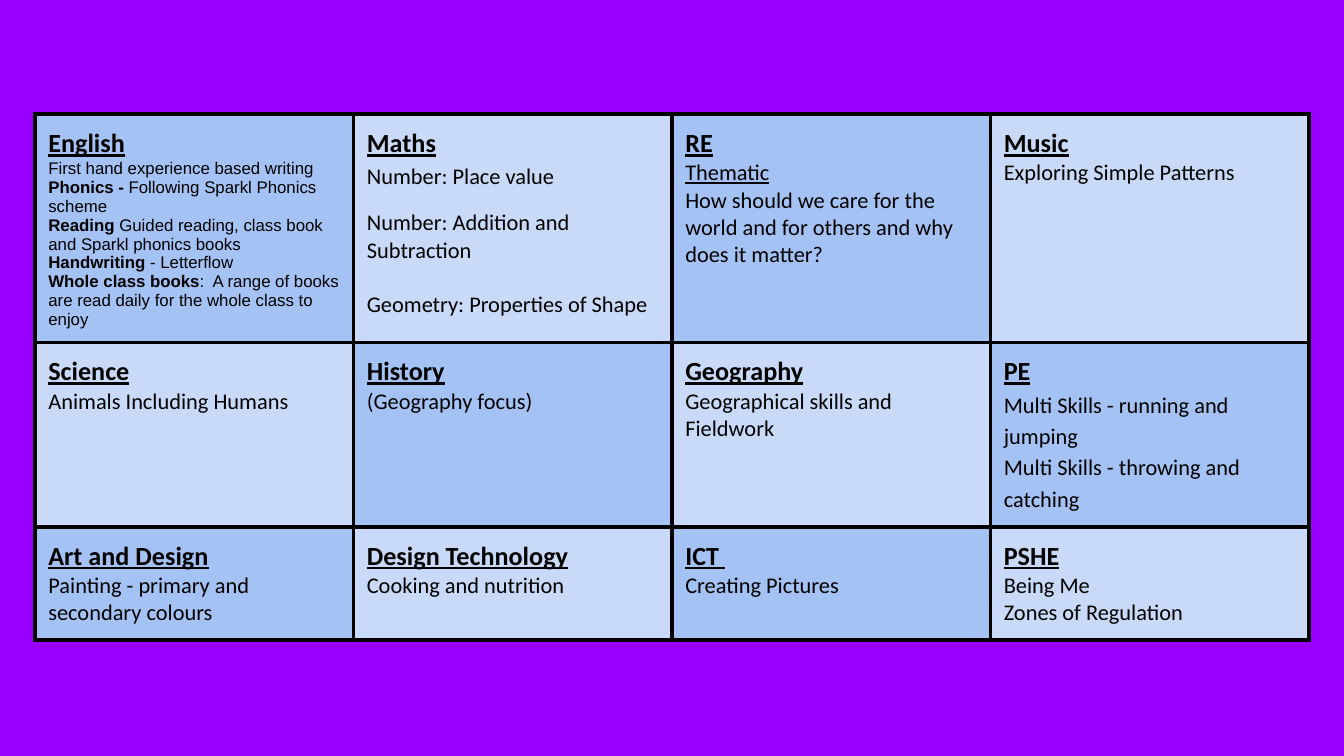
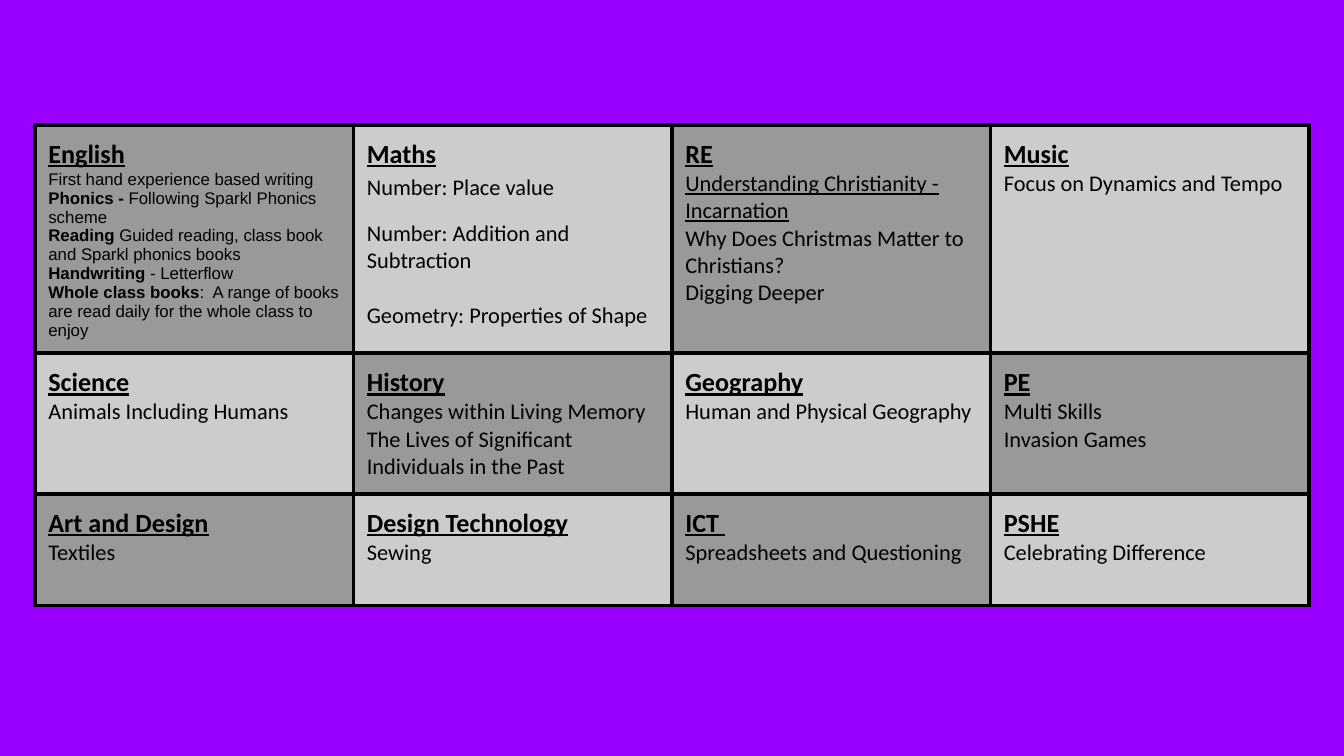
from lxml.etree import SubElement
from pptx import Presentation
from pptx.dml.color import RGBColor
from pptx.oxml.ns import qn
from pptx.util import Pt

PIXEL = 4572
PURPLE, BLACK = "9900FF", "000000"
BLUES = ("A4C2F4", "C9DAF8")
GREYS = ("999999", "CCCCCC")
BORDER = Pt(2.25)
BLANK_LAYOUT = 6

HEADING = {"name": "Calibri", "size": Pt(14), "bold": True, "underline": True}
BODY = {"name": "Calibri", "size": Pt(12), "bold": False, "underline": False}
SMALL = {**BODY, "name": "Arial", "size": Pt(9)}
SMALL_BOLD = {**SMALL, "bold": True}
UNDERLINED = {**BODY, "underline": True}
LOOSE = {"line_spacing": 1.15}


def color(value):
    return RGBColor.from_string(value)


def px(value):
    return value * PIXEL


def line(text, style=BODY, **spacing):
    return [(text, style)], spacing


def labelled(*parts):
    styles = (SMALL_BOLD, SMALL)
    return [(text, styles[index % 2]) for index, text in enumerate(parts)], {}


ENGLISH = [
    labelled("", "First hand experience based writing ",
             "Phonics -", " Following Sparkl Phonics scheme"),
    labelled("Reading ", "Guided reading, class book and Sparkl phonics books"),
    labelled("Handwriting", " - Letterflow"),
    labelled("Whole class books",
             ":  A range of books are read daily for the whole class to enjoy"),
]
MATHS = [
    line("Number: Place value", **LOOSE),
    line("Number: Addition and Subtraction", space_before=Pt(10)),
    line("Geometry: Properties of Shape", space_before=Pt(14.65)),
]
SCIENCE = [line("Animals Including Humans")]

SUBJECTS = [
    ["English", "Maths", "RE", "Music"],
    ["Science", "History", "Geography", "PE"],
    ["Art and Design", "Design Technology", "ICT ", "PSHE"],
]
FIRST_TERM = {
    "English": ENGLISH,
    "Maths": MATHS,
    "RE": [line("Thematic", UNDERLINED),
           line("How should we care for the world and for others and why does it matter?")],
    "Music": [line("Exploring Simple Patterns")],
    "Science": SCIENCE,
    "History": [line("(Geography focus)")],
    "Geography": [line("Geographical skills and Fieldwork")],
    "PE": [line("Multi Skills - running and jumping", **LOOSE),
           line("Multi Skills - throwing and catching", **LOOSE)],
    "Art and Design": [line("Painting - primary and secondary colours")],
    "Design Technology": [line("Cooking and nutrition")],
    "ICT ": [line("Creating Pictures")],
    "PSHE": [line("Being Me"), line("Zones of Regulation")],
}
SECOND_TERM = {
    "English": ENGLISH,
    "Maths": MATHS,
    "RE": [line("Understanding Christianity - Incarnation", UNDERLINED),
           line("Why Does Christmas Matter to Christians?"),
           line("Digging Deeper")],
    "Music": [line("Focus on Dynamics and Tempo")],
    "Science": SCIENCE,
    "History": [line("Changes within Living Memory"),
                line("The Lives of Significant Individuals in the Past")],
    "Geography": [line("Human and Physical Geography")],
    "PE": [line("Multi Skills"), line("Invasion Games")],
    "Art and Design": [line("Textiles")],
    "Design Technology": [line("Sewing")],
    "ICT ": [line("Spreadsheets and Questioning")],
    "PSHE": [line("Celebrating Difference")],
}


class CurriculumDeck:
    def __init__(self):
        self.deck = Presentation()
        self.deck.slide_width, self.deck.slide_height = px(2000), px(1125)
        self.page = None

    def add_page(self):
        self.page = self.deck.slides.add_slide(self.deck.slide_layouts[BLANK_LAYOUT])
        fill = self.page.background.fill
        fill.solid()
        fill.fore_color.rgb = color(PURPLE)

    def add_curriculum(self, top, row_heights, topics, fills):
        columns, column_width = len(SUBJECTS[0]), 474
        frame = self.page.shapes.add_table(
            len(SUBJECTS), columns, px(52), px(top),
            px(columns * column_width), px(sum(row_heights)))
        table = frame.table
        table.first_row = table.horz_banding = False
        for row, height in zip(table.rows, row_heights):
            row.height = px(height)
        for column in table.columns:
            column.width = px(column_width)
        for row_index, subjects in enumerate(SUBJECTS):
            for column_index, subject in enumerate(subjects):
                cell = table.cell(row_index, column_index)
                self.format_cell(cell, fills[(row_index + column_index) % 2])
                self.add_text(cell.text_frame, [line(subject, HEADING)] + topics[subject])

    def format_cell(self, cell, fill):
        for side in ("left", "right", "top", "bottom"):
            setattr(cell, f"margin_{side}", px(20))
        properties = cell._tc.get_or_add_tcPr()
        for side in "LRTB":
            border = SubElement(properties, qn(f"a:ln{side}"), w=str(BORDER))
            solid = SubElement(border, qn("a:solidFill"))
            SubElement(solid, qn("a:srgbClr"), val=BLACK)
        cell.fill.solid()
        cell.fill.fore_color.rgb = color(fill)

    def add_text(self, text_frame, lines):
        for index, (spans, spacing) in enumerate(lines):
            para = text_frame.add_paragraph() if index else text_frame.paragraphs[0]
            for key, value in spacing.items():
                setattr(para, key, value)
            for text, style in spans:
                if not text:
                    continue
                span = para.add_run()
                span.text = text
                span.font.color.rgb = color(BLACK)
                for key, value in style.items():
                    setattr(span.font, key, value)


def main():
    builder = CurriculumDeck()
    for top, row_heights, topics, fills in (
        (170, (322, 166, 166), FIRST_TERM, BLUES),
        (186, (328, 166, 166), SECOND_TERM, GREYS),
    ):
        builder.add_page()
        builder.add_curriculum(top, row_heights, topics, fills)
    builder.deck.save("out.pptx")


if __name__ == "__main__":
    main()
